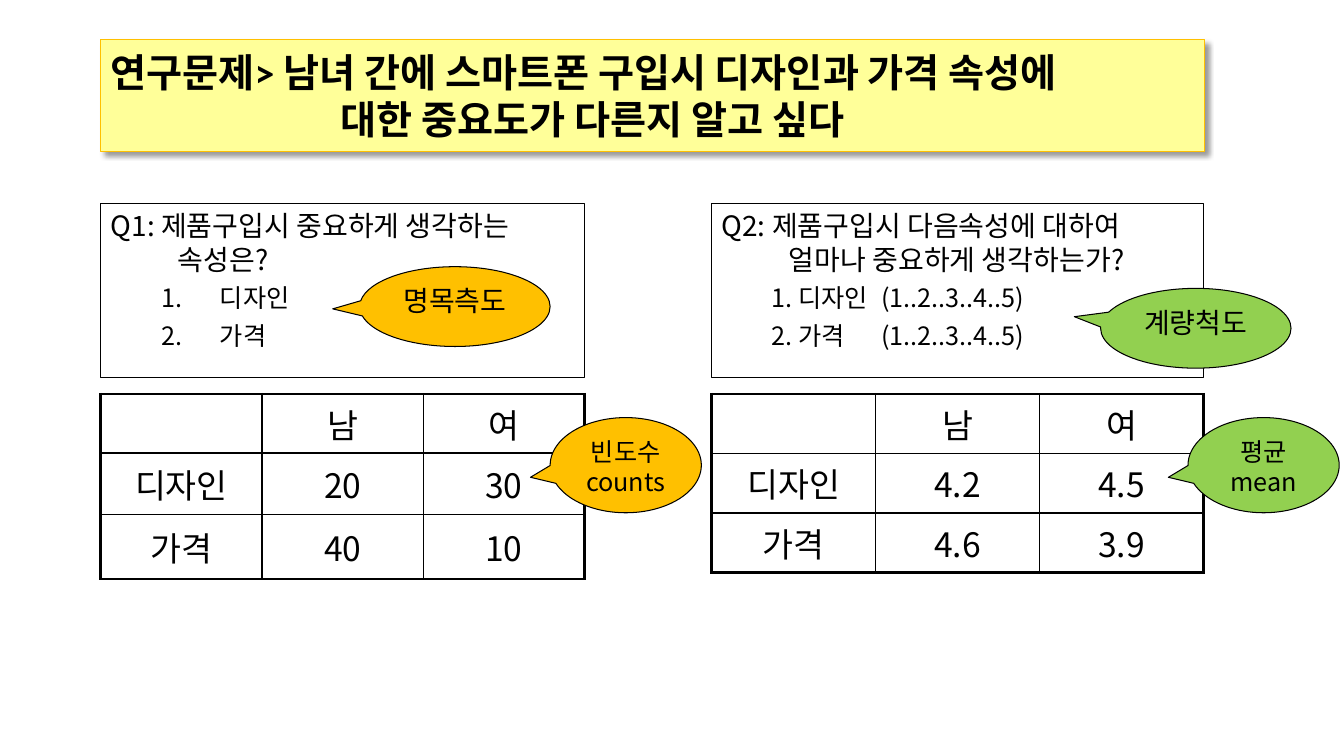
from dataclasses import dataclass
from typing import Any, Optional

from lxml.etree import SubElement
from pptx import Presentation
from pptx.dml.color import RGBColor
from pptx.enum.shapes import MSO_SHAPE
from pptx.enum.text import MSO_ANCHOR, MSO_AUTO_SIZE, PP_ALIGN
from pptx.oxml.ns import qn
from pptx.util import Pt


@dataclass(frozen=True)
class Theme:
    black: str = "000000"
    yellow: str = "FFFF99"
    orange: str = "FFC000"
    green: str = "92D050"
    title_font: str = "Calibri"
    body_font: str = "Noto Sans CJK KR"
    title_size: float = 28
    table_size: float = 24
    question_size: float = 20
    item_size: float = 18
    hairline: float = 0.75
    inner_border: float = 1
    outer_border: float = 2.25


THEME = Theme()


@dataclass(frozen=True)
class Area:
    left: float
    top: float
    width: float
    height: float

    def lengths(self) -> list[Pt]:
        return [Pt(value) for value in (self.left, self.top, self.width, self.height)]


@dataclass(frozen=True)
class Item:
    text: str
    tab_stop: Optional[float] = None


@dataclass(frozen=True)
class Question:
    area: Area
    text: str
    items: list[Item]
    numbered: bool


@dataclass(frozen=True)
class Grid:
    area: Area
    row_heights: list[float]
    rows: list[list[str]]


@dataclass(frozen=True)
class Callout:
    area: Area
    tail: tuple[float, float]
    fill: str
    lines: list[str]
    size: float


TITLE_AREA = Area(72, 28.2, 788.4, 80)
QUESTIONS = [
    Question(Area(72, 145.4, 345.6, 124.6), "Q1: 제품구입시 중요하게 생각하는 속성은?",
             [Item("디자인"), Item("가격")], True),
    Question(Area(508.3, 145.4, 351.4, 124.6),
             "Q2: 제품구입시 다음속성에 대하여 얼마나 중요하게 생각하는가?",
             [Item("1. 디자인\t(1..2..3..4..5)", 124),
              Item("2. 가격\t(1..2..3..4..5)", 112)], False),
]
GRIDS = [
    Grid(Area(72, 281.5, 345.6, 131), [41, 44, 46],
         [["", "남", "여"], ["디자인", "20", "30"], ["가격", "40", "10"]]),
    Grid(Area(508.3, 281.5, 351.4, 127.5), [42.5] * 3,
         [["", "남", "여"], ["디자인", "4.2", "4.5"], ["가격", "4.6", "3.9"]]),
]
CALLOUTS = [
    Callout(Area(257, 190.5, 136, 57), (-0.642, 0.029), THEME.orange,
            ["명목측도"], THEME.question_size),
    Callout(Area(786.2, 206, 136, 57), (-0.638, -0.145), THEME.green,
            ["계량척도"], THEME.question_size),
    Callout(Area(393, 298.3, 108, 68), (-0.63, 0.127), THEME.orange,
            ["빈도수", "counts"], THEME.item_size),
    Callout(Area(848.6, 298.3, 108, 68), (-0.63, 0.127), THEME.green,
            ["평균", "mean"], THEME.item_size),
]


def write(para: Any, text: str, *, size: float, font: str = THEME.body_font,
          bold: bool = False, align: PP_ALIGN = PP_ALIGN.LEFT, before: float = 0,
          level: int = 0, margin: float = 0, hanging: float = 0,
          numbered: bool = False, tab_stop: Optional[float] = None) -> None:
    para.text = text
    para.alignment = align
    para.level = level
    para.space_before = Pt(before)
    properties = para._p.get_or_add_pPr()
    properties.set("marL", str(Pt(margin)))
    properties.set("indent", str(Pt(-hanging)))
    if numbered:
        SubElement(properties, qn("a:buAutoNum"), type="arabicPeriod")
    if tab_stop is not None:
        stops = SubElement(properties, qn("a:tabLst"))
        SubElement(stops, qn("a:tab"), pos=str(Pt(tab_stop)), algn="l")
    for span in para.runs:
        span.font.name = font
        span.font.size = Pt(size)
        span.font.bold = bold
        span.font.color.rgb = RGBColor.from_string(THEME.black)
        SubElement(span._r.get_or_add_rPr(), qn("a:ea"), typeface=THEME.body_font)


def paint(shape: Any, *, fill: Optional[str], line: str = THEME.black) -> None:
    shape.shadow.inherit = False
    if fill is None:
        shape.fill.background()
    else:
        shape.fill.solid()
        shape.fill.fore_color.rgb = RGBColor.from_string(fill)
    shape.line.color.rgb = RGBColor.from_string(line)
    shape.line.width = Pt(THEME.hairline)


def draw_title(page: Any) -> None:
    title = page.shapes.title
    title.left, title.top, title.width, title.height = TITLE_AREA.lengths()
    paint(title, fill=THEME.yellow, line=THEME.orange)
    effects = title._element.spPr.find(qn("a:effectLst"))
    shadow = SubElement(effects, qn("a:outerShdw"), blurRad=str(Pt(4)),
                        dist=str(Pt(3)), dir="2700000", algn="tl", rotWithShape="0")
    color = SubElement(shadow, qn("a:srgbClr"), val=THEME.black)
    SubElement(color, qn("a:alpha"), val="40000")
    frame = title.text_frame
    frame.auto_size = MSO_AUTO_SIZE.NONE
    frame.vertical_anchor = MSO_ANCHOR.MIDDLE
    write(frame.paragraphs[0],
          "연구문제> 남녀 간에 스마트폰 구입시 디자인과 가격 속성에\v대한 중요도가 다른지 알고 싶다",
          size=THEME.title_size, font=THEME.title_font, bold=True,
          margin=164, hanging=164)


def draw_question(page: Any, question: Question) -> None:
    box = page.shapes.add_shape(MSO_SHAPE.RECTANGLE, *question.area.lengths())
    paint(box, fill=None)
    frame = box.text_frame
    frame.word_wrap = True
    frame.vertical_anchor = MSO_ANCHOR.TOP
    write(frame.paragraphs[0], question.text, size=THEME.question_size,
          before=4, margin=48, hanging=48)
    for item in question.items:
        write(frame.add_paragraph(), item.text, size=THEME.item_size, before=5,
              level=1, margin=78, hanging=42, numbered=question.numbered,
              tab_stop=item.tab_stop)


def add_border(cell: Any, side: str, width: float) -> None:
    line = SubElement(cell._tc.get_or_add_tcPr(), qn(f"a:ln{side}"), w=str(Pt(width)))
    fill = SubElement(line, qn("a:solidFill"))
    SubElement(fill, qn("a:srgbClr"), val=THEME.black)


def draw_grid(page: Any, grid: Grid) -> None:
    row_count, column_count = len(grid.rows), len(grid.rows[0])
    table = page.shapes.add_table(row_count, column_count, *grid.area.lengths()).table
    table.first_row = table.horz_banding = False
    for column in table.columns:
        column.width = Pt(grid.area.width / column_count)
    for r, (height, texts) in enumerate(zip(grid.row_heights, grid.rows)):
        table.rows[r].height = Pt(height)
        for c, text in enumerate(texts):
            cell = table.cell(r, c)
            outer_sides = {"L": c == 0, "R": c == column_count - 1,
                           "T": r == 0, "B": r == row_count - 1}
            for side, outer in outer_sides.items():
                add_border(cell, side, THEME.outer_border if outer else THEME.inner_border)
            cell.fill.background()
            cell.vertical_anchor = MSO_ANCHOR.MIDDLE
            if text:
                write(cell.text_frame.paragraphs[0], text, size=THEME.table_size,
                      align=PP_ALIGN.CENTER, before=4.8)


def draw_callout(page: Any, callout: Callout) -> None:
    bubble = page.shapes.add_shape(MSO_SHAPE.OVAL_CALLOUT, *callout.area.lengths())
    bubble.adjustments[0], bubble.adjustments[1] = callout.tail
    paint(bubble, fill=callout.fill)
    frame = bubble.text_frame
    frame.word_wrap = True
    frame.vertical_anchor = MSO_ANCHOR.TOP
    for index, text in enumerate(callout.lines):
        para = frame.add_paragraph() if index else frame.paragraphs[0]
        write(para, text, size=callout.size, align=PP_ALIGN.CENTER)


def main() -> None:
    deck = Presentation()
    deck.slide_width, deck.slide_height = Pt(960), Pt(540)
    page = deck.slides.add_slide(deck.slide_layouts.get_by_name("Title Only"))
    draw_title(page)
    for grid in GRIDS:
        draw_grid(page, grid)
    for question in QUESTIONS:
        draw_question(page, question)
    for callout in CALLOUTS:
        draw_callout(page, callout)
    deck.save("out.pptx")


if __name__ == "__main__":
    main()
